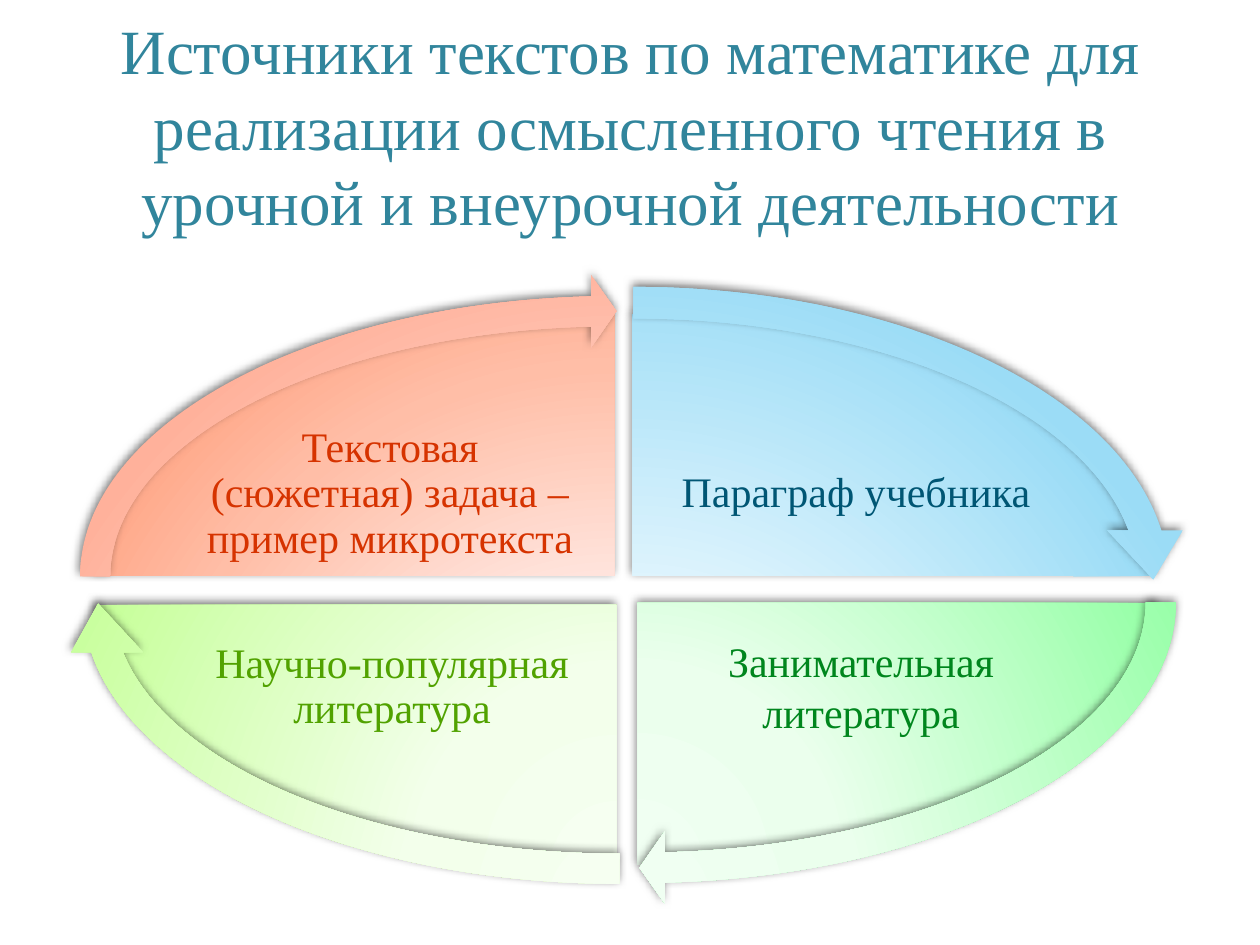
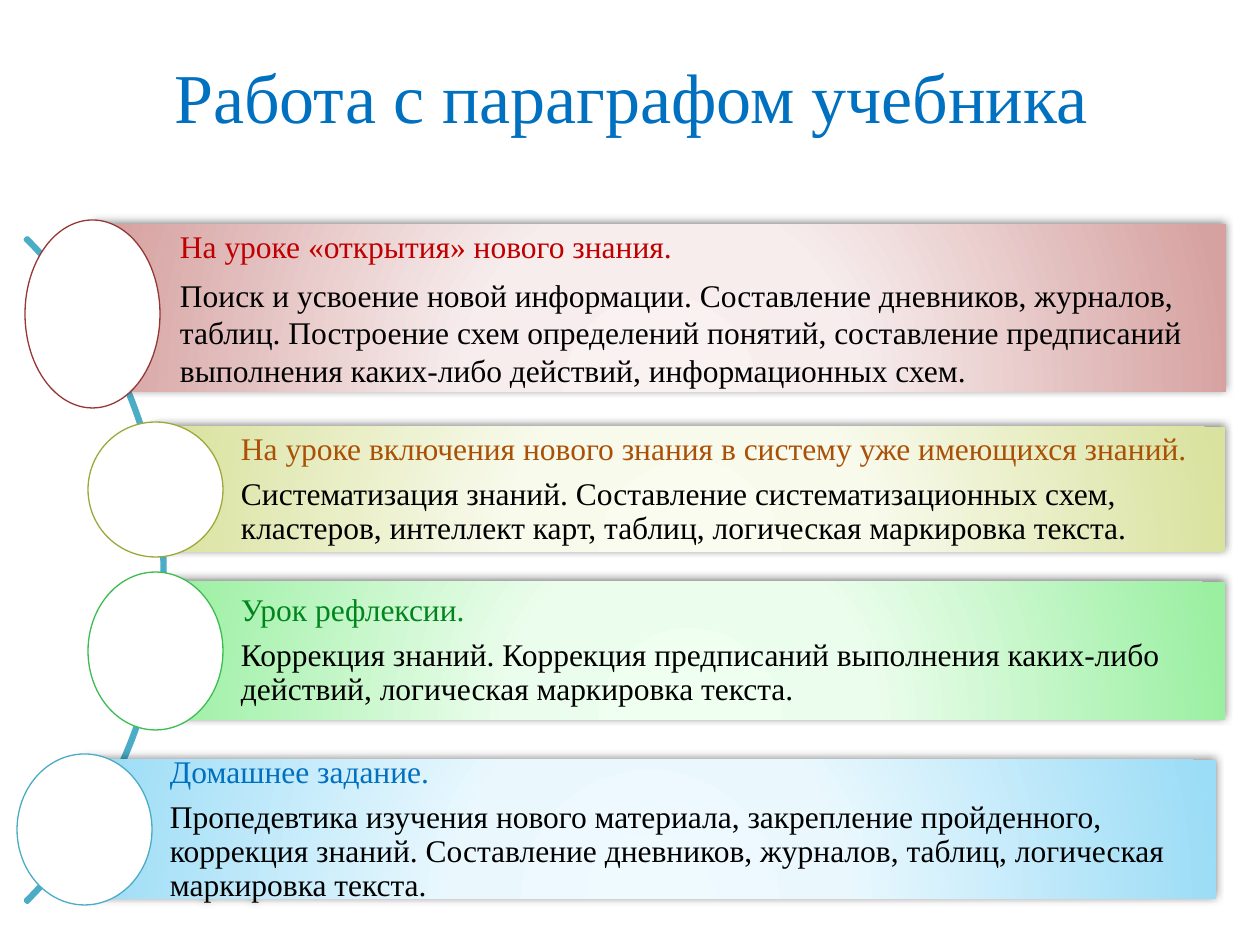
from pptx import Presentation
from pptx.dml.color import RGBColor
from pptx.enum.shapes import MSO_SHAPE
from pptx.enum.text import MSO_ANCHOR, PP_ALIGN
from pptx.oxml.ns import qn
from pptx.util import Emu, Pt
from lxml.etree import SubElement

PX_PER_INCH = 126
FONT = "Times New Roman"

BLACK = RGBColor(0x00, 0x00, 0x00)
WHITE = RGBColor(0xFF, 0xFF, 0xFF)
TEAL = RGBColor(0x31, 0x85, 0x9C)
AQUA = RGBColor(0x4B, 0xAC, 0xC6)
BLUE = RGBColor(0x00, 0x70, 0xC0)
NAVY = RGBColor(0x00, 0x56, 0x74)
GREEN = RGBColor(0x00, 0x86, 0x1D)
LEAF = RGBColor(0x51, 0xA2, 0x00)
ORANGE_RED = RGBColor(0xD6, 0x33, 0x00)
RED = RGBColor(0xC0, 0x00, 0x00)
BROWN = RGBColor(0xAA, 0x51, 0x07)
MAROON_LINE = RGBColor(0x95, 0x37, 0x34)
OLIVE_LINE = RGBColor(0x9E, 0xA8, 0x39)
GREEN_LINE = RGBColor(0x3D, 0xBC, 0x50)

# Gradient stops: (percent, colour)
SKY = [(0, RGBColor(0xEF, 0xFA, 0xFF)), (34, RGBColor(0xEA, 0xF8, 0xFE)),
       (100, RGBColor(0x9B, 0xDC, 0xF6))]
MINT = [(0, RGBColor(0xF0, 0xFF, 0xF2)), (34, RGBColor(0xEB, 0xFF, 0xED)),
        (100, RGBColor(0x95, 0xFF, 0xA6))]
LIME = [(0, RGBColor(0xF6, 0xFF, 0xF1)), (34, RGBColor(0xF3, 0xFF, 0xEB)),
        (100, RGBColor(0xC6, 0xFF, 0x99))]
CORAL_BASE = [(0, RGBColor(0xFF, 0xF4, 0xF1)), (34, RGBColor(0xFF, 0xEF, 0xEC))]
CORAL_PIE = CORAL_BASE + [(81, RGBColor(0xFF, 0xBE, 0xA7)),
                          (100, RGBColor(0xFF, 0xAB, 0x8D))]
CORAL_ARROW = CORAL_BASE + [(100, RGBColor(0xFF, 0xB1, 0x9B))]
ROSE = [(0, RGBColor(0xFA, 0xF1, 0xF1)), (34, RGBColor(0xF7, 0xED, 0xED)),
        (100, RGBColor(0xD6, 0xA2, 0xA1))]
OLIVE = [(0, RGBColor(0xFA, 0xFC, 0xF0)), (34, RGBColor(0xF8, 0xFA, 0xEC)),
         (100, RGBColor(0xD9, 0xE2, 0x9E))]
GRASS = [(0, RGBColor(0xEF, 0xFF, 0xF0)), (34, RGBColor(0xEB, 0xFD, 0xEC)),
         (100, RGBColor(0x9A, 0xEF, 0xA1))]

# Angles as adjustment values: a full turn is 216
QUARTER_TURN = 54
FULL_TURN = 216
ARROW_SWEEP = 50.72

PIE_SIZE = (1041, 524)
LABEL_SIZE = (384, 144)
TIGHT = {"line_spacing": 0.9, "space_after": Pt(8.4)}

# start angle, pie place, pie stops, label place, label, label colour,
# paragraph format, arrow box, arrow stops
QUADRANTS = [
    (162, (112, 314), SKY, (664, 422), "Параграф учебника", NAVY, TIGHT,
     (76, 265, 1115, 629), SKY),
    (0, (117, 341), MINT, (669, 614), "Занимательная литература", GREEN, {},
     (82, 301, 1115, 603), MINT),
    (54, (96, 343), LIME, (200, 615), "Научно-популярная литература", LEAF, TIGHT,
     (62, 302, 1115, 603), LIME),
    (108, (94, 314), CORAL_PIE, (198, 422),
     "Текстовая (сюжетная) задача – пример микротекста", ORANGE_RED, TIGHT,
     (59, 275, 1115, 603), CORAL_ARROW),
]

LOOSE_BAR = {"space_after": Pt(6)}
TIGHT_BAR = {"line_spacing": 0.9, "space_after": Pt(6.3)}

# bar box, stops, circle box, circle line, heading colour, heading, body, format
LESSONS = [
    ((94, 224, 1132, 168), ROSE, (25, 220, 135, 188), MAROON_LINE, RED,
     "На уроке «открытия» нового знания.",
     "Поиск и усвоение новой информации. Составление дневников, журналов, таблиц. "
     "Построение схем определений понятий, составление предписаний выполнения "
     "каких-либо действий, информационных схем.", LOOSE_BAR),
    ((155, 427, 1070, 125), OLIVE, (88, 422, 135, 135), OLIVE_LINE, BROWN,
     "На уроке включения нового знания в систему уже имеющихся знаний.",
     "Систематизация знаний. Составление систематизационных схем, кластеров, "
     "интеллект карт, таблиц, логическая маркировка текста.", TIGHT_BAR),
    ((155, 582, 1070, 138), GRASS, (88, 572, 135, 158), GREEN_LINE, GREEN,
     "Урок рефлексии.",
     "Коррекция знаний. Коррекция предписаний выполнения каких-либо действий, "
     "логическая маркировка текста.", TIGHT_BAR),
    ((84, 760, 1132, 139), SKY, (17, 754, 135, 151), AQUA, BLUE,
     "Домашнее задание.",
     "Пропедевтика изучения нового материала, закрепление пройденного, коррекция "
     "знаний. Составление дневников, журналов, таблиц, логическая маркировка "
     "текста.", TIGHT_BAR),
]


def px(length):
    return Emu(round(length * 914400 / PX_PER_INCH))


def apply_format(target, values):
    for name, value in values.items():
        setattr(target, name, value)


def set_insets(frame, left, other):
    apply_format(frame, {"margin_left": px(left), "margin_top": px(other),
                         "margin_right": px(other), "margin_bottom": px(other)})


def write_paragraphs(frame, paragraphs, size, paragraph_formats):
    """Write (text, colour, paragraph format) entries, centred vertically."""
    apply_format(frame, {"word_wrap": True, "vertical_anchor": MSO_ANCHOR.MIDDLE})
    for index, (text, colour) in enumerate(paragraphs):
        paragraph = frame.paragraphs[0] if index == 0 else frame.add_paragraph()
        apply_format(paragraph, paragraph_formats[index])
        run = paragraph.add_run()
        run.text = text
        apply_format(run.font, {"name": FONT, "size": Pt(size)})
        run.font.color.rgb = colour


def add_centred_text(slide, box, text, size, colour, extra=None):
    frame = slide.shapes.add_textbox(*map(px, box)).text_frame
    paragraph_format = {"alignment": PP_ALIGN.CENTER, **(extra or {})}
    write_paragraphs(frame, [(text, colour)], size, [paragraph_format])
    return frame


def add_plain_shape(slide, kind, box, adjustments=()):
    """Add a preset shape without shadow, with the given adjustments."""
    shape = slide.shapes.add_shape(kind, *map(px, box))
    shape.shadow.inherit = False
    for index, value in enumerate(adjustments):
        shape.adjustments[index] = value
    return shape


def add_outlined_shape(slide, kind, box, colour, width, fill=None, adjustments=()):
    shape = add_plain_shape(slide, kind, box, adjustments)
    if fill is None:
        shape.fill.background()
    else:
        shape.fill.solid()
        shape.fill.fore_color.rgb = fill
    shape.line.color.rgb = colour
    shape.line.width = Pt(width)


def add_glowing_shape(slide, kind, box, stops, adjustments=()):
    """Add a shape with a radial gradient and a soft shadow."""
    shape = add_plain_shape(slide, kind, box, adjustments)
    shape.line.fill.background()
    properties = shape._element.spPr

    gradient = SubElement(properties, qn("a:gradFill"), rotWithShape="1")
    stop_list = SubElement(gradient, qn("a:gsLst"))
    for percent, colour in stops:
        stop = SubElement(stop_list, qn("a:gs"), pos=str(percent * 1000))
        SubElement(stop, qn("a:srgbClr"), val=str(colour))
    radial = SubElement(gradient, qn("a:path"), path="circle")
    SubElement(radial, qn("a:fillToRect"), l="50000", t="155000", r="50000", b="-55000")
    properties.find(qn("a:prstGeom")).addnext(gradient)

    shadow = SubElement(properties.find(qn("a:effectLst")), qn("a:outerShdw"),
                        blurRad=str(Pt(5)), dist=str(Pt(2)), dir=str(245 * 60000),
                        rotWithShape="0")
    shadow_colour = SubElement(shadow, qn("a:srgbClr"), val=str(BLACK))
    SubElement(shadow_colour, qn("a:alpha"), val="50000")
    return shape


def add_sources_cycle(slide):
    for start, place, stops, label_place, label, colour, extra, _, _ in QUADRANTS:
        end = (start + QUARTER_TURN) % FULL_TURN
        add_glowing_shape(slide, MSO_SHAPE.PIE, place + PIE_SIZE, stops, (start, end))
        frame = add_centred_text(slide, label_place + LABEL_SIZE, label, 24, colour, extra)
        set_insets(frame, 4, 4)
    for start, *_, arrow_box, arrow_stops in QUADRANTS:
        add_glowing_shape(slide, MSO_SHAPE.CIRCULAR_ARROW, arrow_box, arrow_stops,
                          (0.05, 3.28, start + ARROW_SWEEP, start, 0.06))


def add_lesson_bar(slide, lesson):
    bar_box, stops, circle_box, circle_line, colour, heading, body, spacing = lesson
    bar = add_glowing_shape(slide, MSO_SHAPE.RECTANGLE, bar_box, stops)
    set_insets(bar.text_frame, 86, 6)
    heading_format = {"alignment": PP_ALIGN.LEFT, **spacing}
    body_format = dict(heading_format)
    if spacing is LOOSE_BAR:
        del body_format["space_after"]
    write_paragraphs(bar.text_frame, [(heading, colour), (body, BLACK)], 18,
                     [heading_format, body_format])
    add_outlined_shape(slide, MSO_SHAPE.OVAL, circle_box, circle_line, 0.75, WHITE)


def main():
    presentation = Presentation()
    presentation.slide_width = px(1260)
    presentation.slide_height = px(945)
    blank = presentation.slide_layouts[6]

    slide = presentation.slides.add_slide(blank)
    add_centred_text(slide, (25, 16, 1211, 218),
                     "Источники текстов по математике для реализации осмысленного "
                     "чтения в урочной и внеурочной деятельности", 36, TEAL)
    add_sources_cycle(slide)

    slide = presentation.slides.add_slide(blank)
    add_centred_text(slide, (64, 16, 1134, 158), "Работа с параграфом учебника", 40, BLUE)
    add_outlined_shape(slide, MSO_SHAPE.BLOCK_ARC, (-775, 100, 940, 940), AQUA, 2,
                       adjustments=(189, 27, 0.003))
    for lesson in LESSONS:
        add_lesson_bar(slide, lesson)

    presentation.save("out.pptx")


if __name__ == "__main__":
    main()
